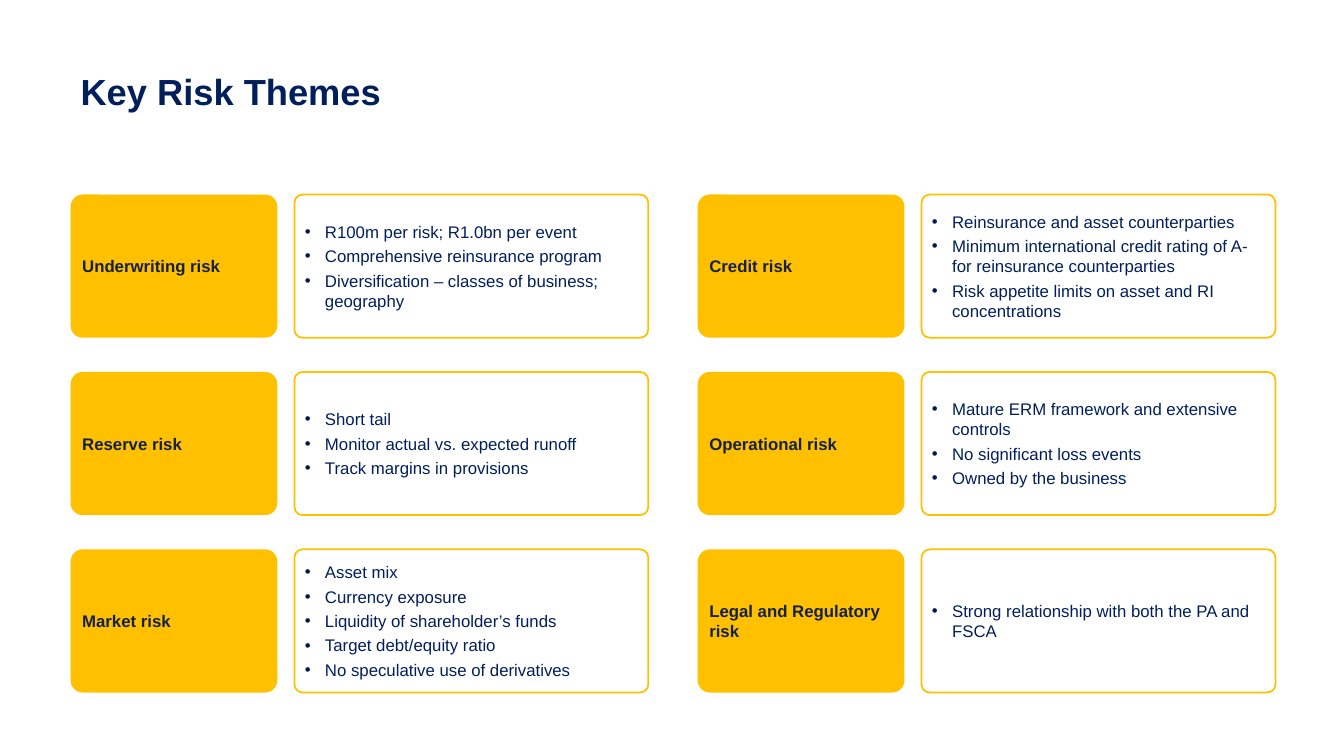
import lxml.etree
import pptx
import pptx.dml.color
import pptx.enum.shapes
import pptx.enum.text
import pptx.oxml.ns
import pptx.util

GOLD, WHITE, NAVY, DARK, DOT = "FFC000", "FFFFFF", "001F5B", "152044", "00184C"
LEFT, TOP = 0.7, 1.93
PITCH_X, PITCH_Y = 6.22, 1.76
TAG_W, BODY_W, BODY_X, HIGH = 2.05, 3.51, 2.22, 1.42

# One list per grid column, read downwards.
RISKS = [
    [
        ("Underwriting risk", [
            "R100m per risk; R1.0bn per event",
            "Comprehensive reinsurance program",
            "Diversification – classes of business; geography",
        ]),
        ("Reserve risk", [
            "Short tail",
            "Monitor actual vs. expected runoff",
            "Track margins in provisions",
        ]),
        ("Market risk", [
            "Asset mix",
            "Currency exposure",
            "Liquidity of shareholder’s funds",
            "Target debt/equity ratio",
            "No speculative use of derivatives",
        ]),
    ],
    [
        ("Credit risk", [
            "Reinsurance and asset counterparties",
            "Minimum international credit rating of A- for reinsurance counterparties",
            "Risk appetite limits on asset and RI concentrations",
        ]),
        ("Operational risk", [
            "Mature ERM framework and extensive controls",
            "No significant loss events",
            "Owned by the business",
        ]),
        ("Legal and Regulatory risk", [
            "Strong relationship with both the PA and FSCA",
        ]),
    ],
]


def inch(*sizes):
    return [pptx.util.Inches(size) for size in sizes]


def color(code):
    return pptx.dml.color.RGBColor.from_string(code)


def bullet(para):
    props = para._p.get_or_add_pPr()
    indent = pptx.util.Inches(0.2)
    props.set("marL", str(indent))
    props.set("indent", str(-indent))

    def add(parent, tag, **attrs):
        return lxml.etree.SubElement(parent, pptx.oxml.ns.qn(tag), attrs)

    add(add(props, "a:buClr"), "a:srgbClr", val=DOT)
    add(props, "a:buFont", typeface="Arial")
    add(props, "a:buChar", char="•")


def write(shape, *lines, size=12, ink=NAVY, bold=False, dots=False,
          gap=0, pads=(0.08, 0.05, 0.08, 0.05), anchor="MIDDLE", pace=None):
    """Fill a shape with paragraphs; pads run left, top, right, bottom."""
    frame = shape.text_frame
    frame.word_wrap = True
    frame.vertical_anchor = pptx.enum.text.MSO_ANCHOR[anchor]
    (frame.margin_left, frame.margin_top,
     frame.margin_right, frame.margin_bottom) = inch(*pads)
    for index, line in enumerate(lines):
        para = frame.add_paragraph() if index else frame.paragraphs[0]
        if dots:
            bullet(para)
        para.alignment = pptx.enum.text.PP_ALIGN.LEFT
        if index:
            para.space_before = pptx.util.Pt(gap)
        if pace:
            para.line_spacing = pace
        run = para.add_run()
        run.text = line
        run.font.name = "Arial"
        run.font.size = pptx.util.Pt(size)
        run.font.bold = bold
        run.font.color.rgb = color(ink)


def card(slide, left, top, width, fill, round, edge=None):
    kind = pptx.enum.shapes.MSO_SHAPE.ROUNDED_RECTANGLE
    shape = slide.shapes.add_shape(kind, *inch(left, top, width, HIGH))
    shape.adjustments[0] = round / HIGH
    shape.shadow.inherit = False
    shape.fill.solid()
    shape.fill.fore_color.rgb = color(fill)
    if edge:
        shape.line.color.rgb = color(edge)
        shape.line.width = pptx.util.Pt(1.25)
    else:
        shape.line.fill.background()
    return shape


def risk(slide, col, row, name, notes):
    """Draw a gold name card and its outlined list in one grid cell."""
    left, top = LEFT + col * PITCH_X, TOP + row * PITCH_Y
    tag = card(slide, left, top, TAG_W, GOLD, 0.12)
    write(tag, name, ink=DARK, bold=True)
    body = card(slide, left + BODY_X, top, BODY_W, WHITE, 0.08, edge=GOLD)
    write(body, *notes, dots=True, gap=3, pads=(0.08, 0.05, 0.05, 0.05))


def main():
    deck = pptx.Presentation()
    deck.slide_width, deck.slide_height = inch(13.33, 7.5)
    slide = deck.slides.add_slide(deck.slide_layouts[6])
    title = slide.shapes.add_textbox(*inch(LEFT, 0.76, 11.95, 0.36))
    write(title, "Key Risk Themes", size=25.9, bold=True, anchor="TOP",
          pads=(0.1, 0.11, 0.1, 0), pace=0.5)
    for col, items in enumerate(RISKS):
        for row, (name, notes) in enumerate(items):
            risk(slide, col, row, name, notes)
    deck.save("out.pptx")


if __name__ == "__main__":
    main()
